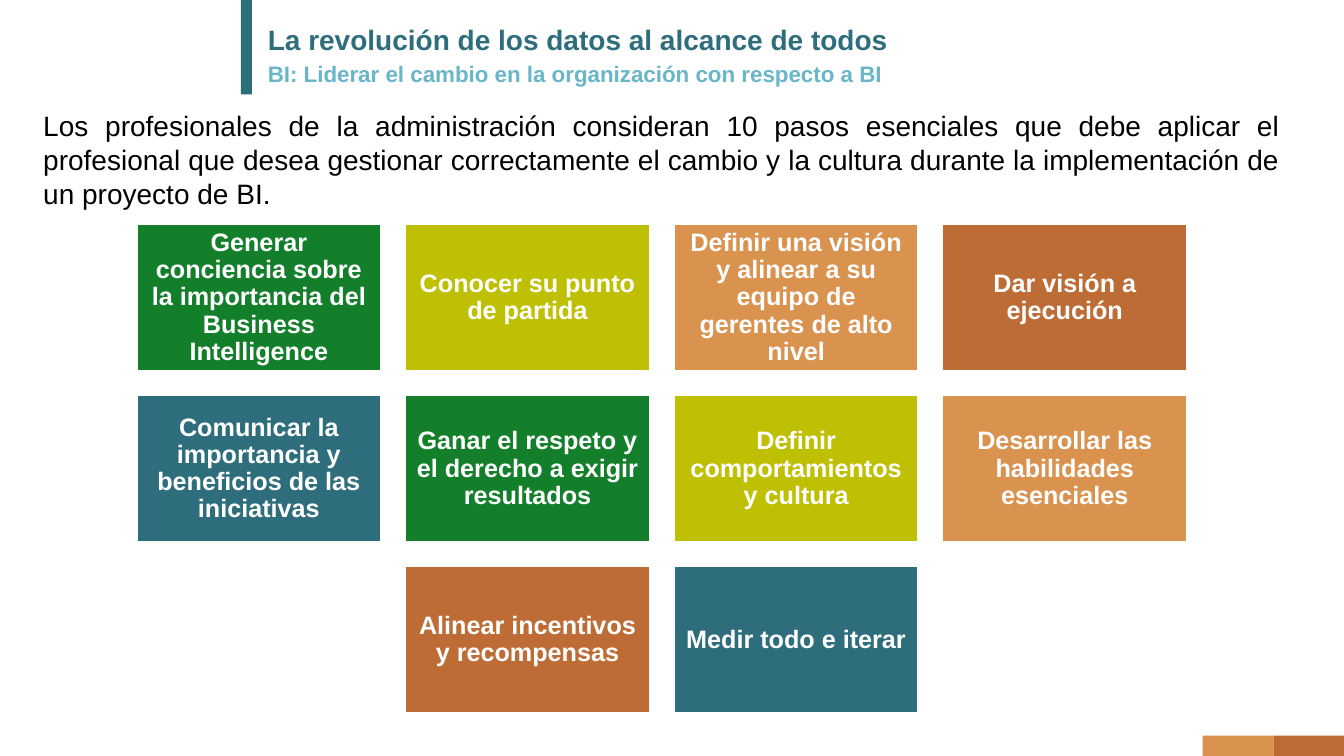
from dataclasses import dataclass

from pptx import Presentation
from pptx.dml.color import RGBColor
from pptx.enum.shapes import MSO_SHAPE
from pptx.enum.text import MSO_ANCHOR, PP_ALIGN
from pptx.util import Cm, Pt

RECTANGLE = MSO_SHAPE.RECTANGLE
TOP, MIDDLE = MSO_ANCHOR.TOP, MSO_ANCHOR.MIDDLE
LEFT, CENTER, JUSTIFY = PP_ALIGN.LEFT, PP_ALIGN.CENTER, PP_ALIGN.JUSTIFY

COLORS = {
    "teal": "2D6D7C", "sky": "69B6C9", "green": "137F2B", "lime": "BFBF04",
    "orange": "DA924F", "rust": "BD6C36", "white": "FFFFFF", "black": "000000",
}
STEP_COLORS = ["green", "lime", "orange", "rust", "teal"]
STEPS = [
    "Generar conciencia sobre la importancia del Business Intelligence",
    "Conocer su punto de partida",
    "Definir una visión y alinear a su equipo de gerentes de alto nivel",
    "Dar visión a ejecución",
    "Comunicar la importancia y beneficios de las iniciativas",
    "Ganar el respeto y el derecho a exigir resultados",
    "Definir comportamientos y cultura",
    "Desarrollar las habilidades esenciales",
    "Alinear incentivos y recompensas",
    "Medir todo e iterar",
]

# Lengths in centimetres
SLIDE_WIDTH, SLIDE_HEIGHT = 33.87, 19.05
CORNER_WIDTH, CORNER_HEIGHT = 1.78, 0.51
COLUMNS = 4
GRID_LEFT, GRID_TOP = 3.45, 5.66
STEP_WIDTH, STEP_HEIGHT, GAP = 6.15, 3.69, 0.62
STEP_INSET = 0.18


@dataclass
class Area:
    left: float
    top: float
    width: float
    height: float

    def lengths(self) -> tuple:
        return Cm(self.left), Cm(self.top), Cm(self.width), Cm(self.height)


@dataclass
class TextStyle:
    size: int
    color: str
    bold: bool = True
    align: int = LEFT
    spacing: float = 0.9
    anchor: int = TOP


@dataclass
class TextItem:
    text: str
    area: Area
    style: TextStyle


STEP_STYLE = TextStyle(18, "white", align=CENTER, anchor=MIDDLE)
TEXT_ITEMS = [
    TextItem("La revolución de los datos al alcance de todos",
             Area(6.5, 0.53, 26.54, 1.02), TextStyle(20, "teal")),
    TextItem("BI: Liderar el cambio en la organización con respecto a BI",
             Area(6.5, 1.47, 26.54, 1.02), TextStyle(16, "sky")),
    TextItem("Los profesionales de la administración consideran 10 pasos "
             "esenciales que debe aplicar el profesional que desea gestionar "
             "correctamente el cambio y la cultura durante la implementación "
             "de un proyecto de BI.",
             Area(0.84, 2.62, 31.67, 2.82),
             TextStyle(20, "black", bold=False, align=JUSTIFY, spacing=1.0)),
]


def rgb(name: str) -> RGBColor:
    return RGBColor.from_string(COLORS[name])


def write_text(box, text: str, style: TextStyle) -> None:
    frame = box.text_frame
    frame.text = text
    frame.word_wrap = True
    frame.vertical_anchor = style.anchor
    para = frame.paragraphs[0]
    para.alignment = style.align
    para.line_spacing = style.spacing
    span = para.runs[0]
    span.font.name = "Arial"
    span.font.size = Pt(style.size)
    span.font.bold = style.bold
    span.font.color.rgb = rgb(style.color)


def add_block(page, area: Area, color: str):
    block = page.shapes.add_shape(RECTANGLE, *area.lengths())
    block.shadow.inherit = False
    block.fill.solid()
    block.fill.fore_color.rgb = rgb(color)
    block.line.fill.background()
    return block


def add_step(page, index: int, text: str) -> None:
    row, column = divmod(index, COLUMNS)
    steps_in_row = min(COLUMNS, len(STEPS) - row * COLUMNS)
    column += (COLUMNS - steps_in_row) / 2  # a short row is centred
    area = Area(GRID_LEFT + column * (STEP_WIDTH + GAP),
                GRID_TOP + row * (STEP_HEIGHT + GAP), STEP_WIDTH, STEP_HEIGHT)
    step = add_block(page, area, STEP_COLORS[index % len(STEP_COLORS)])
    step.line.color.rgb = rgb("white")
    step.line.width = Pt(1)
    frame = step.text_frame
    frame.margin_left = frame.margin_right = Cm(STEP_INSET)
    frame.margin_top = frame.margin_bottom = Cm(STEP_INSET)
    write_text(step, text, STEP_STYLE)


def main() -> None:
    deck = Presentation()
    deck.slide_width, deck.slide_height = Cm(SLIDE_WIDTH), Cm(SLIDE_HEIGHT)
    page = deck.slides.add_slide(deck.slide_layouts[6])

    # Title bar and corner blocks
    add_block(page, Area(6.07, 0, 0.28, 2.38), "teal")
    for place, color in enumerate(["rust", "orange"], start=1):
        add_block(page, Area(SLIDE_WIDTH - place * CORNER_WIDTH,
                             SLIDE_HEIGHT - CORNER_HEIGHT,
                             CORNER_WIDTH, CORNER_HEIGHT), color)

    # Title, subtitle and introduction
    for item in TEXT_ITEMS:
        box = page.shapes.add_textbox(*item.area.lengths())
        write_text(box, item.text, item.style)

    # Ten steps
    for index, text in enumerate(STEPS):
        add_step(page, index, text)

    deck.save("out.pptx")


if __name__ == "__main__":
    main()
